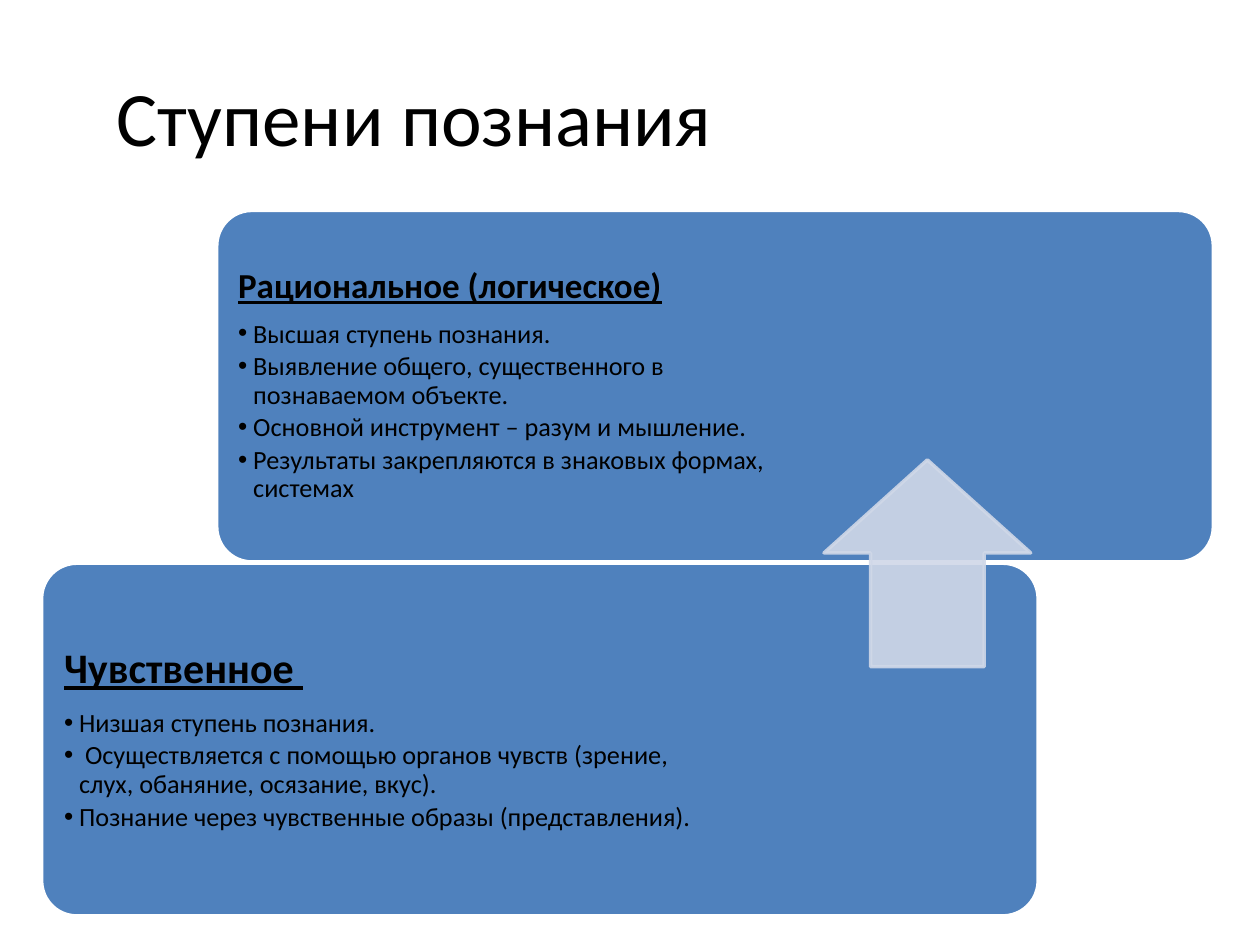
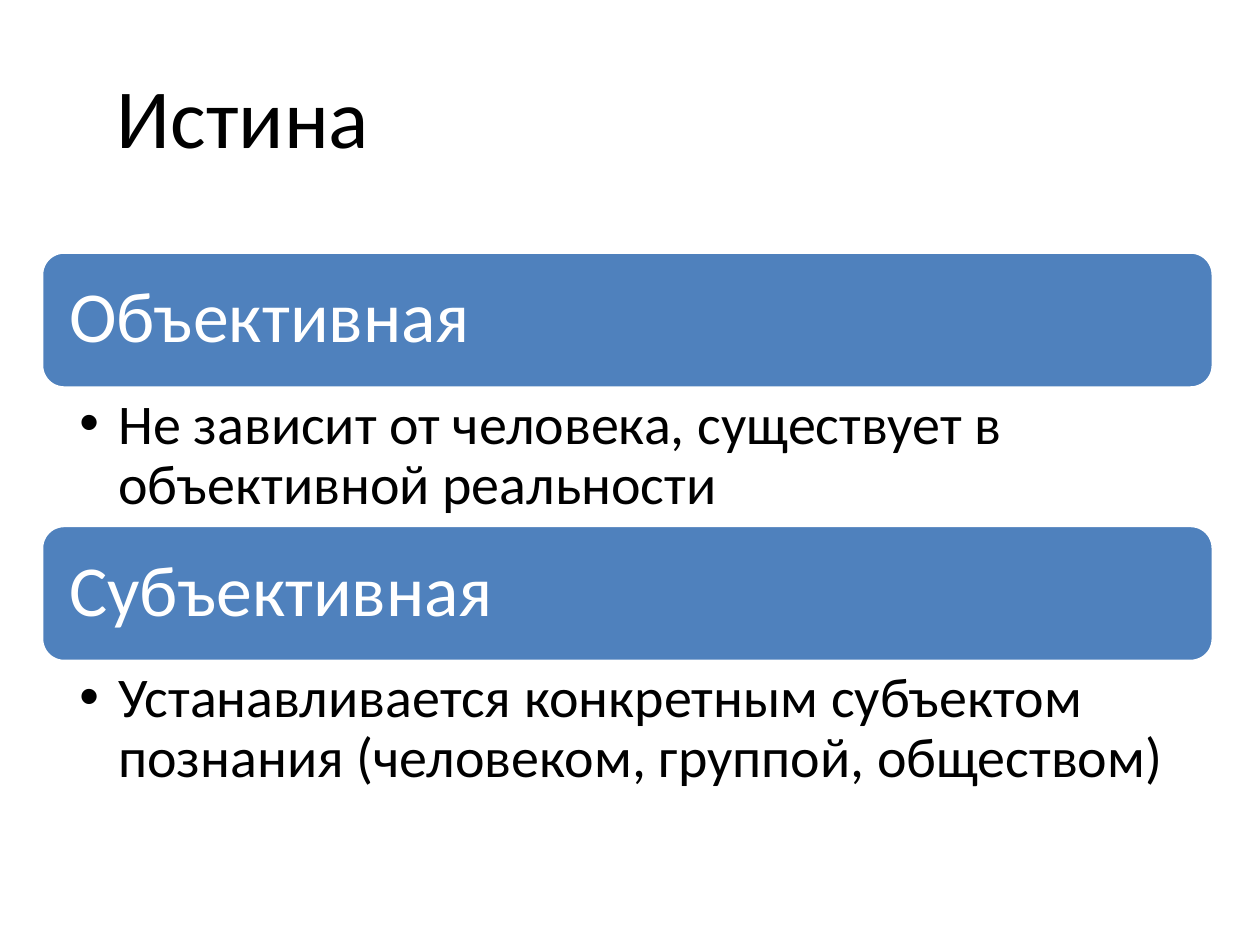
"""Build two slides on the steps of cognition and the kinds of truth."""
from lxml import etree
from pptx import Presentation
from pptx.dml.color import RGBColor
from pptx.enum import shapes, text
from pptx.oxml import ns
from pptx.util import Inches, Pt

BLUE = RGBColor(0x4F, 0x81, 0xBD)
PALE = RGBColor(0xD0, 0xD8, 0xE8)
WHITE = RGBColor(0xFF, 0xFF, 0xFF)
BLACK = RGBColor(0x00, 0x00, 0x00)

TITLE = {"size": Pt(44), "color": BLACK}
BAND = {"size": Pt(41), "color": WHITE, "line": 0.9, "after": 16}
NOTE = {"size": Pt(32), "color": BLACK, "line": 0.9, "after": 7, "indent": 0.31}
POINT = {"size": Pt(15), "color": BLACK, "line": 0.9, "after": 2.5, "indent": 0.12}
HEADING = {"color": BLACK, "bold": True, "underline": True, "line": 0.9}


def add_shape(slide, kind, box, fill, line, adjustments=()):
    shape = slide.shapes.add_shape(kind, *map(Inches, box))
    shape.shadow.inherit = False
    shape.fill.solid()
    shape.fill.fore_color.rgb = fill
    shape.line.color.rgb = line
    shape.line.width = Pt(2)
    for index, value in enumerate(adjustments):
        shape.adjustments[index] = value
    return shape


def add_text(slide, box, paragraphs, insets=(0.1, 0.05, 0.1, 0.05), anchor=text.MSO_ANCHOR.MIDDLE):
    frame = slide.shapes.add_textbox(*map(Inches, box)).text_frame
    frame.word_wrap = True
    frame.vertical_anchor = anchor
    for side, inset in zip(("left", "top", "right", "bottom"), insets):
        setattr(frame, f"margin_{side}", Inches(inset))
    for index, (words, style) in enumerate(paragraphs):
        paragraph = frame.add_paragraph() if index else frame.paragraphs[0]
        paragraph.line_spacing = style.get("line", 1.0)
        paragraph.space_after = Pt(style.get("after", 0))
        if "indent" in style:
            properties = paragraph._p.get_or_add_pPr()
            properties.set("marL", str(Inches(style["indent"])))
            properties.set("indent", str(-Inches(style["indent"])))
            etree.SubElement(properties, ns.qn("a:buFont"), typeface="Arial")
            etree.SubElement(properties, ns.qn("a:buChar"), char="•")
        run = paragraph.add_run()
        run.text = words
        run.font.name = "Calibri"
        run.font.color.rgb = style["color"]
        for name in ("size", "bold", "underline"):
            if name in style:
                setattr(run.font, name, style[name])


presentation = Presentation()
presentation.slide_width = Inches(10)
presentation.slide_height = Inches(7.5)

slides = []
for title, size in (("Ступени познания", 44), ("Истина", 48)):
    slide = presentation.slides.add_slide(presentation.slide_layouts[6])
    add_text(slide, (0.83, 0.29, 8.83, 1.25), [(title, TITLE | {"size": Pt(size)})])
    slides.append(slide)
steps_slide, truth_slide = slides

steps = [
    ((0.33, 4.47, 7.91, 2.8), (0.41, 4.55, 5.29, 2.64), 0.1, 24, "Чувственное ", [
        "Низшая ступень познания.",
        " Осуществляется с помощью органов чувств (зрение, слух, обаняние, осязание, вкус).",
        "Познание через чувственные образы (представления).",
    ]),
    ((1.72, 1.67, 7.91, 2.79), (1.81, 1.75, 4.71, 2.63), 0.08, 20, "Рациональное (логическое)", [
        "Высшая ступень познания.",
        "Выявление общего, существенного в познаваемом объекте.",
        "Основной инструмент – разум и мышление.",
        "Результаты закрепляются в знаковых формах, системах",
    ]),
]
for card, text_box, inset, size, heading, points in steps:
    add_shape(steps_slide, shapes.MSO_SHAPE.ROUNDED_RECTANGLE, card, BLUE, WHITE, [0.1])
    heading_style = HEADING | {"size": Pt(size), "after": size * 0.4}
    paragraphs = [(heading, heading_style)] + [(point, POINT) for point in points]
    add_text(steps_slide, text_box, paragraphs, [inset] * 4)

arrow = add_shape(steps_slide, shapes.MSO_SHAPE.DOWN_ARROW, (6.54, 3.65, 1.64, 1.64), PALE, PALE, [0.55, 0.45])
arrow.rotation = 180
for color in arrow._element.spPr.iter(ns.qn("a:srgbClr")):
    etree.SubElement(color, ns.qn("a:alpha"), val="90000")

truths = [
    ("Объективная", "Не зависит от человека, существует в объективной реальности"),
    ("Субъективная", "Устанавливается конкретным субъектом познания (человеком, группой, обществом)"),
]
for index, (kind, meaning) in enumerate(truths):
    top = 2 + index * 2.17
    add_shape(truth_slide, shapes.MSO_SHAPE.ROUNDED_RECTANGLE, (0.33, top, 9.3, 1.08), BLUE, WHITE)
    add_text(truth_slide, (0.38, top + 0.05, 9.2, 0.97), [(kind, BAND)], [0.17] * 4)
    add_text(truth_slide, (0.33, top + 1.08, 9.3, 1.09), [(meaning, NOTE)],
             (0.3, 0.06, 0.32, 0.06), text.MSO_ANCHOR.TOP)

presentation.save("out.pptx")
